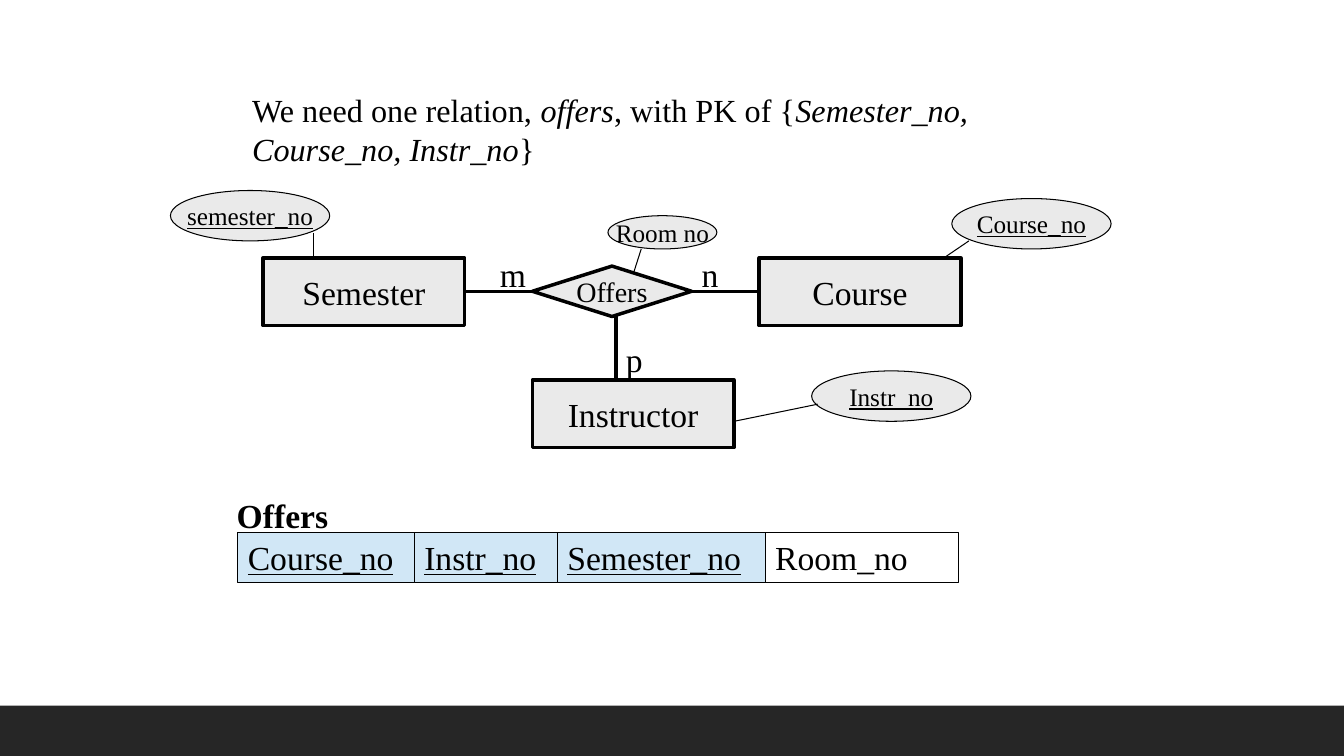
from pptx import Presentation
from pptx.dml.color import RGBColor
from pptx.enum.shapes import MSO_CONNECTOR, MSO_SHAPE
from pptx.enum.text import MSO_ANCHOR, MSO_AUTO_SIZE, PP_ALIGN
from pptx.oxml.ns import qn
from pptx.util import Inches, Pt

RECTANGLE, DIAMOND, OVAL = MSO_SHAPE.RECTANGLE, MSO_SHAPE.DIAMOND, MSO_SHAPE.OVAL
STRAIGHT = MSO_CONNECTOR.STRAIGHT
LEFT, CENTER = PP_ALIGN.LEFT, PP_ALIGN.CENTER
TOP, MIDDLE = MSO_ANCHOR.TOP, MSO_ANCHOR.MIDDLE
NO_AUTOFIT = MSO_AUTO_SIZE.NONE

BLACK = RGBColor(0x00, 0x00, 0x00)
FOOTER_GRAY = RGBColor(0x26, 0x26, 0x26)
NODE_GRAY = RGBColor(0xEA, 0xEA, 0xEA)
KEY_BLUE = RGBColor(0xD1, 0xE7, 0xF6)
TITLE_ONLY_LAYOUT = 5


class DiagramSlide:
    font_name = "Times New Roman"
    thin, medium, thick = 0.75, 2.25, 2.5

    def __init__(self, presentation):
        layout = presentation.slide_layouts[TITLE_ONLY_LAYOUT]
        self.slide = presentation.slides.add_slide(layout)

    def add_text(self, shape, runs, size, align=LEFT, anchor=TOP, wrap=True):
        """Fill a shape with runs given as (text, italic, bold, underline) styles."""
        frame = shape.text_frame
        frame.auto_size = NO_AUTOFIT
        frame.word_wrap = wrap
        frame.vertical_anchor = anchor
        paragraph = frame.paragraphs[0]
        paragraph.alignment = align
        for text, style in runs:
            run = paragraph.add_run()
            run.text = text
            run.font.name = self.font_name
            run.font.size = Pt(size)
            run.font.color.rgb = BLACK
            run.font.italic = style == "italic"
            run.font.bold = style == "bold"
            run.font.underline = style == "underline"

    def title(self, box, runs, size):
        shape = self.slide.shapes.title
        shape.left, shape.top, shape.width, shape.height = map(Inches, box)
        self.add_text(shape, runs, size)

    def label(self, left, top, text, width=0.5, style=None):
        box = map(Inches, (left, top, width, 0.5))
        self.add_text(self.slide.shapes.add_textbox(*box), [(text, style)], 24)

    def box(self, kind, box, fill=None, line_width=None):
        shape = self.slide.shapes.add_shape(kind, *map(Inches, box))
        shape.shadow.inherit = False
        if fill is None:
            shape.fill.background()
        else:
            shape.fill.solid()
            shape.fill.fore_color.rgb = fill
        if line_width is None:
            shape.line.fill.background()
        else:
            shape.line.color.rgb = BLACK
            shape.line.width = Pt(line_width)
        return shape

    def node(self, kind, box, text, size, line_width, style=None):
        shape = self.box(kind, box, NODE_GRAY, line_width)
        self.add_text(shape, [(text, style)], size, CENTER, MIDDLE, wrap=False)

    def entity(self, left, top, text):
        self.node(RECTANGLE, (left, top, 2, 0.67), text, 24, self.thick)

    def key_attribute(self, left, top, text):
        self.node(OVAL, (left, top, 1.58, 0.5), text, 18, self.thin, "underline")

    def line(self, start, end, width):
        connector = self.slide.shapes.add_connector(STRAIGHT, *map(Inches, start + end))
        connector.line.color.rgb = BLACK
        connector.line.width = Pt(width)
        properties = connector._element.spPr
        properties.append(properties.makeelement(qn("a:effectLst"), {}))

    def schema(self, left, top, columns):
        """Draw the relation's columns side by side, key columns filled."""
        for text, width, is_key in columns:
            fill, style = (KEY_BLUE, "underline") if is_key else (None, None)
            cell = self.box(RECTANGLE, (left, top, width, 0.5), fill, self.thin)
            self.add_text(cell, [(text, style)], 24)
            left += width


def main():
    presentation = Presentation()
    presentation.slide_width = Inches(13.33)
    presentation.slide_height = Inches(7.5)
    diagram = DiagramSlide(presentation)

    diagram.box(RECTANGLE, (0, 7, 13.33, 0.5), FOOTER_GRAY)
    diagram.title((2.4, 0.85, 8.7, 0.91), [
        ("We need one relation, ", None),
        ("offers", "italic"),
        (", with PK of {", None),
        ("Semester_no, Course_no, Instr_no", "italic"),
        ("}", None),
    ], 23)

    for start, end in [((4.61, 2.89), (7.53, 2.89)), ((6.11, 3.14), (6.11, 3.77))]:
        diagram.line(start, end, diagram.medium)
    for left, top, text in [(2.61, 2.56, "Semester"), (7.53, 2.56, "Course"),
                            (5.28, 3.77, "Instructor")]:
        diagram.entity(left, top, text)
    diagram.node(DIAMOND, (5.28, 2.64, 1.58, 0.5), "Offers", 20, diagram.thick)
    for left, top, text in [(4.86, 2.47, "m"), (6.86, 2.47, "n"), (6.11, 3.31, "p")]:
        diagram.label(left, top, text)

    diagram.node(OVAL, (6.03, 2.14, 1.08, 0.33), "Room no", 18, diagram.thin)
    for left, top, text in [(1.69, 1.89, "semester_no"), (9.44, 1.97, "Course_no"),
                            (8.05, 3.68, "Instr_no")]:
        diagram.key_attribute(left, top, text)
    for start, end in [((6.36, 2.47), (6.28, 2.72)), ((9.61, 2.39), (9.36, 2.56)),
                       ((3.11, 2.31), (3.11, 2.56)), ((7.28, 4.18), (8.11, 4.01))]:
        diagram.line(start, end, diagram.thin)

    diagram.label(2.25, 4.86, "Offers", 2.17, "bold")
    diagram.schema(2.36, 5.28, [
        ("Course_no", 1.75, True),
        ("Instr_no", 1.42, True),
        ("Semester_no", 2.06, True),
        ("Room_no", 1.92, False),
    ])

    presentation.save("out.pptx")


if __name__ == "__main__":
    main()
